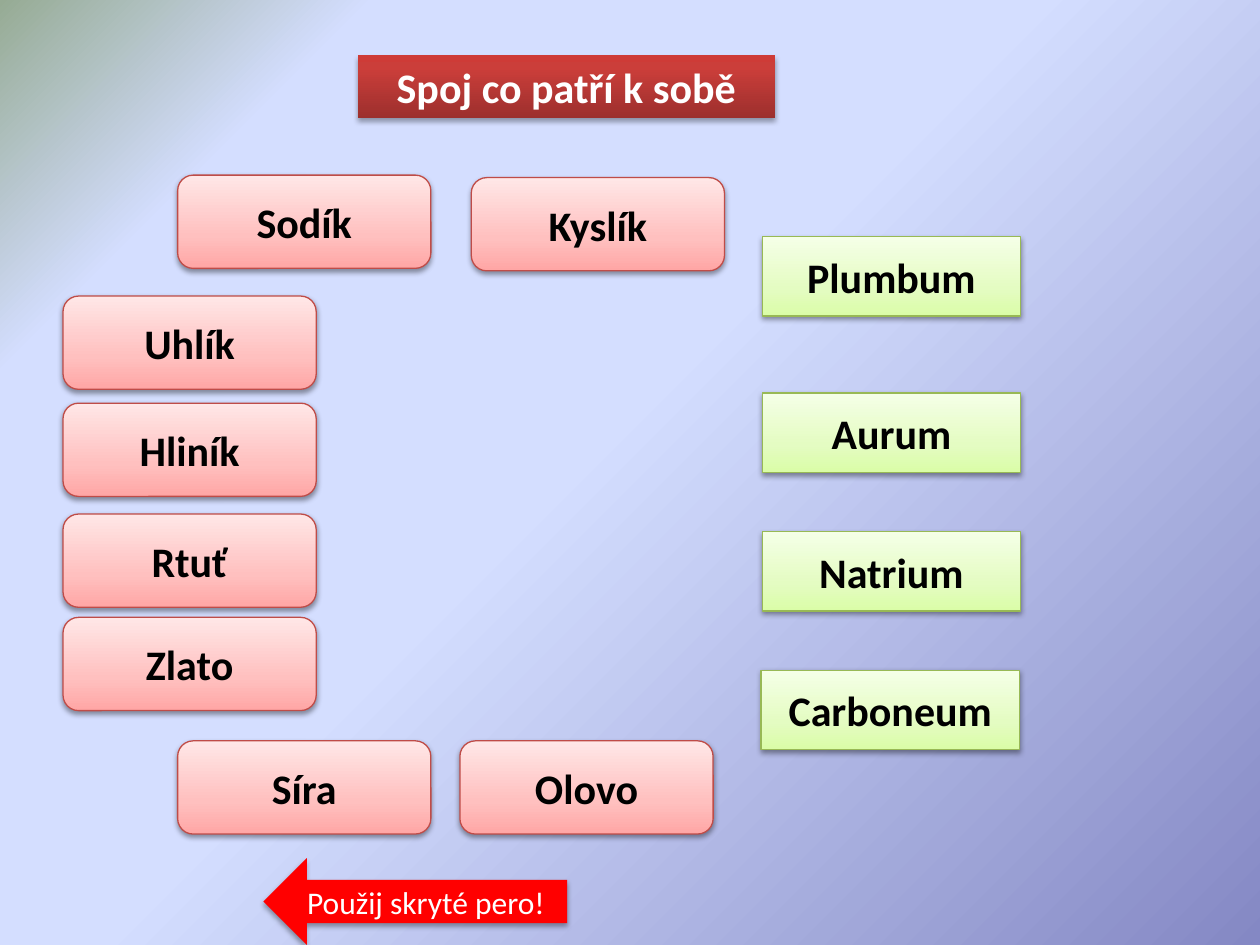
from lxml import etree
from pptx import Presentation
from pptx.dml.color import RGBColor
from pptx.enum.shapes import MSO_SHAPE
from pptx.enum.text import MSO_ANCHOR, MSO_AUTO_SIZE, PP_ALIGN
from pptx.oxml.ns import qn
from pptx.util import Inches, Pt

RECT, ROUND, ARROW = MSO_SHAPE.RECTANGLE, MSO_SHAPE.ROUNDED_RECTANGLE, MSO_SHAPE.LEFT_ARROW
MIDDLE, TOP = MSO_ANCHOR.MIDDLE, MSO_ANCHOR.TOP
CENTER = PP_ALIGN.CENTER
GROW = MSO_AUTO_SIZE.SHAPE_TO_FIT_TEXT

BLACK = RGBColor(0x00, 0x00, 0x00)
WHITE = RGBColor(0xFF, 0xFF, 0xFF)
RED = RGBColor(0xFF, 0x00, 0x00)
PINK_LINE = RGBColor(0xBF, 0x4C, 0x48)
GREEN_LINE = RGBColor(0x98, 0xB9, 0x55)


def stops(*pairs):
    return [(pos, RGBColor.from_string(color)) for pos, color in pairs]


PINK = stops((0, "FFA6A5"), (35, "FFC0BF"), (100, "FFE7E7"))
GREEN = stops((0, "DAFDA7"), (35, "E4FCC2"), (100, "F5FFE7"))
DARK_RED = stops((0, "9C2F2D"), (80, "CB3E3A"), (100, "CE3B37"))
SKY = stops((0, "8488C4"), (53, "D4DEFF"), (83, "D4DEFF"), (100, "96AB94"))


def add(parent, tag, **attrs):
    return etree.SubElement(parent, qn(tag), {k: str(v) for k, v in attrs.items()})


class Deck:
    """Style and current slide; lengths are in a grid of 100 columns by 75 rows."""

    FONT = "Calibri"
    COLS, ROWS = 100, 75

    def __init__(self):
        self.prs = Presentation()
        self.prs.slide_width, self.prs.slide_height = Inches(10), Inches(7.5)
        self.s = self.prs.slides.add_slide(self.prs.slide_layouts[6])

    def x(self, cols):
        return round(self.prs.slide_width * cols / self.COLS)

    def y(self, rows):
        return round(self.prs.slide_height * rows / self.ROWS)

    def gradient(self, owner, colors):
        """Fill a slide background or shape; return the emptied gradient with its stops."""
        target = owner.background if owner is self.s else owner
        target.fill.gradient()
        grad = owner.element.find(".//" + qn("a:gradFill"))
        for child in list(grad):
            grad.remove(child)
        gs_list = add(grad, "a:gsLst")
        for pos, color in colors:
            add(add(gs_list, "a:gs", pos=pos * 1000), "a:srgbClr", val=color)
        return grad

    def background(self, colors):
        grad = self.gradient(self.s, colors)
        add(add(grad, "a:path", path="circle"), "a:fillToRect", l=100000, t=100000)
        add(grad, "a:tileRect", r=-100000, b=-100000)

    def shadow(self, sp, opacity, distance):
        sp.shadow.inherit = False
        effects = sp.element.spPr.find(qn("a:effectLst"))
        outer = add(effects, "a:outerShdw", blurRad=Pt(3.1), dist=Pt(distance),
                    dir=90 * 60000, rotWithShape=0)
        add(add(outer, "a:srgbClr", val=BLACK), "a:alpha", val=opacity * 1000)

    def box(self, text, left, top, width, height, shape, fill, line=None,
            color=BLACK, size=24, bold=True, anchor=MIDDLE):
        sp = self.s.shapes.add_shape(shape, self.x(left), self.y(top),
                                     self.x(width), self.y(height))
        if isinstance(fill, list):
            add(self.gradient(sp, fill), "a:lin", ang=270 * 60000, scaled=0)
        else:
            sp.fill.solid()
            sp.fill.fore_color.rgb = fill
        if line is None:
            sp.line.fill.background()
            self.shadow(sp, 35, 1.8)
        else:
            sp.line.color.rgb = line
            sp.line.width = Pt(0.75)
            self.shadow(sp, 38, 1.6)
        tf = sp.text_frame
        tf.word_wrap = True
        tf.vertical_anchor = anchor
        p = tf.paragraphs[0]
        p.alignment = CENTER
        r = p.add_run()
        r.text = text
        for name, value in {"name": self.FONT, "size": Pt(size), "bold": bold}.items():
            setattr(r.font, name, value)
        r.font.color.rgb = color
        return sp

    def czech(self, text, left, top):
        self.box(text, left, top, 20.1, 7.4, ROUND, PINK, PINK_LINE)

    def latin(self, text, left, top):
        self.box(text, left, top, 20.5, 6.3, RECT, GREEN, GREEN_LINE)


def main():
    deck = Deck()
    deck.background(SKY)

    # Title
    title = deck.box("Spoj co patří k sobě", 28.4, 4.4, 33.1, 5, RECT, DARK_RED,
                     color=WHITE, anchor=TOP)
    title.text_frame.auto_size = GROW

    # Latin names
    for text, left, top in [("Plumbum", 60.5, 18.8), ("Aurum", 60.5, 31.2),
                            ("Natrium", 60.5, 42.2), ("Carboneum", 60.4, 53.2)]:
        deck.latin(text, left, top)

    # Czech names: top row, left column, bottom row
    edge, inner = 5, 14.1
    for text, left, top in [("Sodík", inner, 13.9), ("Kyslík", 37.4, 14.1),
                            ("Uhlík", edge, 23.5), ("Hliník", edge, 32),
                            ("Rtuť", edge, 40.8), ("Zlato", edge, 49),
                            ("Síra", inner, 58.8), ("Olovo", 36.5, 58.8)]:
        deck.czech(text, left, top)

    # Hint arrow
    deck.box("Použij skryté pero!", 20.9, 68.1, 24.1, 6.9, ARROW, RED,
             color=WHITE, size=18, bold=False)

    deck.prs.save("out.pptx")


if __name__ == "__main__":
    main()
